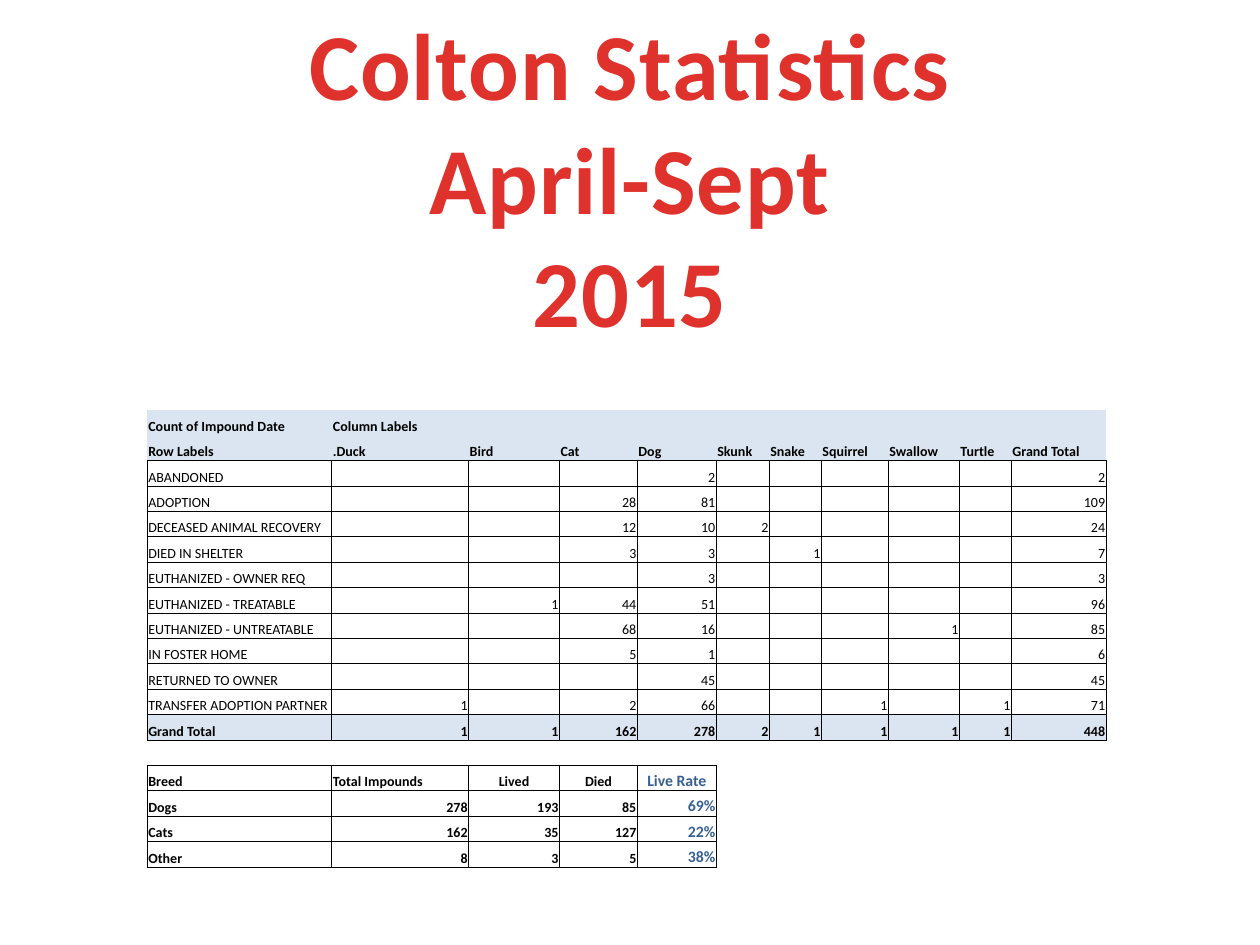
from lxml import etree
from pptx import Presentation
from pptx import util as u
from pptx.dml import color
from pptx.enum import text
from pptx.oxml import ns

TITLE = "Colton Statistics\nApril-Sept\n2015"
COLUMN_WIDTHS = [3.72, 2.76, 1.83, 1.57, 1.59, 1.07, 1.05, 1.35, 1.43, 1.05, 1.91]
TABLE_HEIGHT = 9.73
ROWS = [
    "Count of Impound Date|Column Labels",
    "Row Labels|.Duck|Bird|Cat|Dog|Skunk|Snake|Squirrel|Swallow|Turtle|Grand Total",
    "ABANDONED||||2||||||2",
    "ADOPTION|||28|81||||||109",
    "DECEASED ANIMAL RECOVERY|||12|10|2|||||24",
    "DIED IN SHELTER|||3|3||1||||7",
    "EUTHANIZED - OWNER REQ||||3||||||3",
    "EUTHANIZED - TREATABLE||1|44|51||||||96",
    "EUTHANIZED - UNTREATABLE|||68|16||||1||85",
    "IN FOSTER HOME|||5|1||||||6",
    "RETURNED TO OWNER||||45||||||45",
    "TRANSFER ADOPTION PARTNER|1||2|66|||1||1|71",
    "Grand Total|1|1|162|278|2|1|1|1|1|448",
    "",
    "Breed|Total Impounds|Lived|Died|Live Rate",
    "Dogs|278|193|85|69%",
    "Cats|162|35|127|22%",
    "Other|8|3|5|38%",
    "",
]
IMPOUND_ROWS = range(2, 13)
BREED_HEADER = 14
BREED_ROWS = range(BREED_HEADER, 18)
RATE_COLUMN = 4
SHADED_ROWS = (0, 1, 12)
PLAIN_ROWS = range(2, 12)
NO_STYLE = "{2D5ABB26-0587-4C30-8999-92F81FD0307C}"


def rgb(value):
    return color.RGBColor.from_string(value)


class StatisticsSlide:
    font_name = "Calibri"
    red, blue, black, shade = "E0322D", "376092", "000000", "DBE5F1"

    def __init__(self, presentation):
        self.slide = presentation.slides.add_slide(presentation.slide_layouts[5])

    def style(self, paragraph, size, hex_color, bold, alignment):
        paragraph.alignment = alignment
        font = paragraph.font
        font.name, font.size, font.bold = self.font_name, u.Pt(size), bold
        font.color.rgb = rgb(hex_color)
        return font

    def title(self, content, left, top, width, height):
        shape = self.slide.shapes.title
        shape.left, shape.top = u.Cm(left), u.Cm(top)
        shape.width, shape.height = u.Cm(width), u.Cm(height)
        frame = shape.text_frame
        frame.text = content
        frame.word_wrap = True
        frame.vertical_anchor = text.MSO_ANCHOR.TOP
        frame.auto_size = text.MSO_AUTO_SIZE.SHAPE_TO_FIT_TEXT
        for paragraph in frame.paragraphs:
            font = self.style(paragraph, 54, self.red, True, text.PP_ALIGN.CENTER)
            font._element.set("spc", "50")

    def borders(self, cell):
        properties = cell._tc.get_or_add_tcPr()
        for side in ("a:lnL", "a:lnR", "a:lnT", "a:lnB"):
            line = etree.SubElement(properties, ns.qn(side), w=str(u.Pt(0.5)))
            fill = etree.SubElement(line, ns.qn("a:solidFill"))
            etree.SubElement(fill, ns.qn("a:srgbClr"), val=self.black)

    def cell(self, cell, content, row, column):
        cell.text = content
        cell.vertical_anchor = text.MSO_ANCHOR.BOTTOM
        cell.margin_left = cell.margin_right = cell.margin_top = u.Cm(0.02)
        cell.margin_bottom = 0

        alignment = text.PP_ALIGN.LEFT
        if row == BREED_HEADER and column >= 2:
            alignment = text.PP_ALIGN.CENTER
        elif content.rstrip("%").isdigit():
            alignment = text.PP_ALIGN.RIGHT
        is_rate = row in BREED_ROWS and column == RATE_COLUMN
        size, hex_color = (9, self.blue) if is_rate else (8, self.black)
        self.style(cell.text_frame.paragraphs[0], size, hex_color,
                   row not in PLAIN_ROWS, alignment)

        if row in IMPOUND_ROWS or (row in BREED_ROWS and column <= RATE_COLUMN):
            self.borders(cell)
        if row in SHADED_ROWS:
            cell.fill.solid()
            cell.fill.fore_color.rgb = rgb(self.shade)
        else:
            cell.fill.background()

    def table(self, rows, widths, left, top, height):
        shape = self.slide.shapes.add_table(
            len(rows), len(widths), u.Cm(left), u.Cm(top), u.Cm(sum(widths)), u.Cm(height))
        table = shape.table
        table.first_row = table.horz_banding = False
        table._tbl.tblPr.find(ns.qn("a:tableStyleId")).text = NO_STYLE
        for column, width in zip(table.columns, widths):
            column.width = u.Cm(width)
        for row_index, line in enumerate(rows):
            table.rows[row_index].height = u.Cm(height / len(rows))
            contents = line.split("|")
            contents += [""] * (len(widths) - len(contents))
            for column_index, content in enumerate(contents):
                self.cell(table.cell(row_index, column_index), content, row_index, column_index)


def main():
    presentation = Presentation()
    presentation.slide_width, presentation.slide_height = u.Cm(25.4), u.Cm(19.05)
    statistics = StatisticsSlide(presentation)
    statistics.table(ROWS, COLUMN_WIDTHS, 2.97, 8.26, TABLE_HEIGHT)
    statistics.title(TITLE, 0, 0, 25.4, 7.19)
    presentation.save("out.pptx")


if __name__ == "__main__":
    main()
